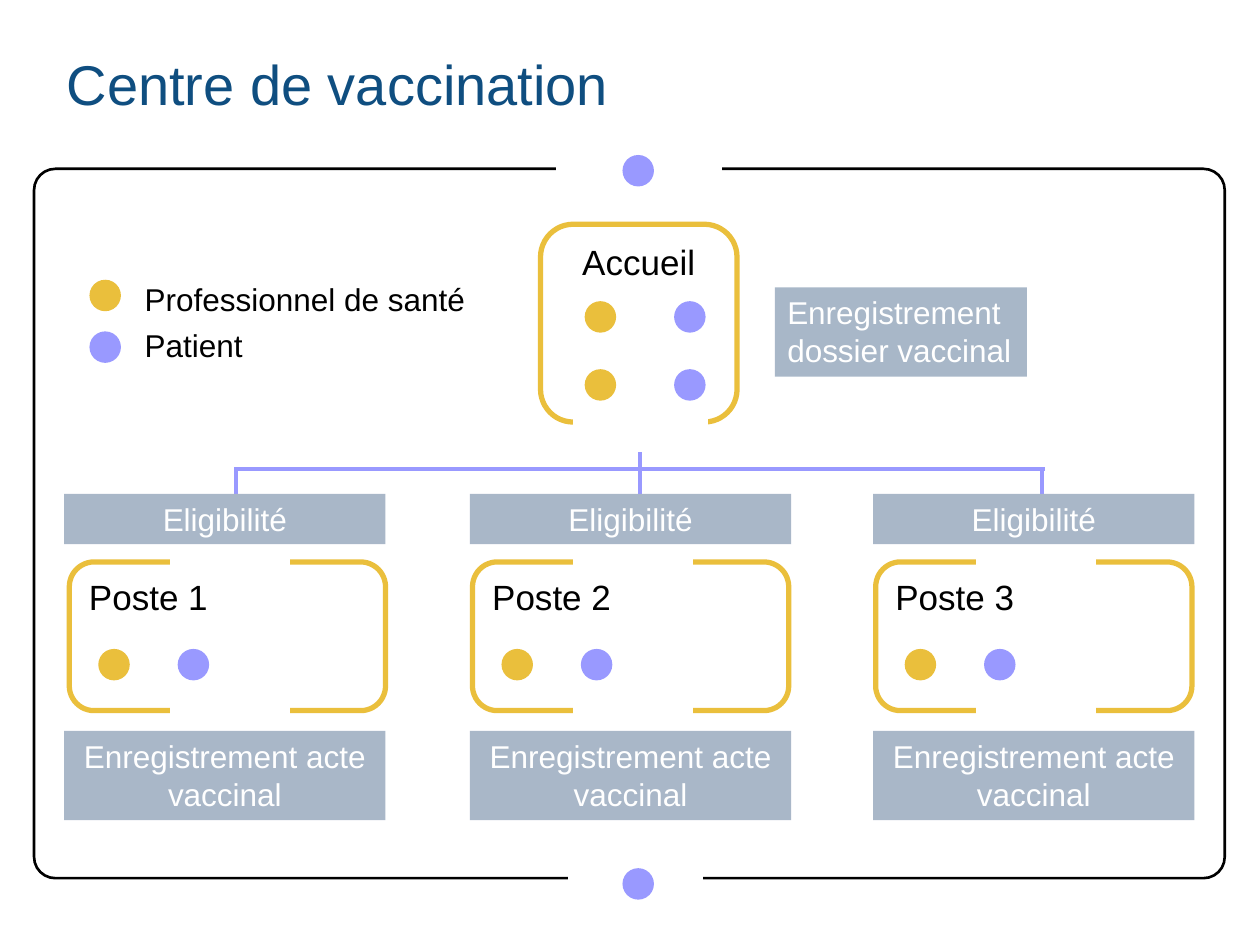
from pptx import Presentation
from pptx.dml.color import RGBColor
from pptx.enum.shapes import MSO_CONNECTOR as CONN, MSO_SHAPE as SHAPE
from pptx.enum.text import MSO_ANCHOR as ANCHOR, PP_ALIGN as ALIGN
from pptx.oxml.ns import qn
from pptx.util import Inches, Pt
from lxml.etree import SubElement

prs = Presentation()
prs.slide_width, prs.slide_height = Inches(10), Inches(7.5)
s = prs.slides.add_slide(prs.slide_layouts[6])

# Grid of 100 columns by 75 rows
CELL = prs.slide_width / 100
GOLD, LILAC, GREY, WHITE, BLACK = "EABF3C", "9999FF", "A9B7C8", "FFFFFF", "000000"
DOT = 2.5


def rgb(color):
    return RGBColor.from_string(color)


def add(kind, x, y, w, h, fill=None, line=None, width=3, text=None, size=18,
        color=WHITE, align=ALIGN.CENTER, anchor=ANCHOR.TOP, wrap=True):
    """Place a shape, or a text box if kind is None, in grid cells."""
    box = [round(v * CELL) for v in (x, y, w, h)]
    if kind is None:
        sp = s.shapes.add_textbox(*box)
    else:
        sp = s.shapes.add_shape(kind, *box)
        sp.shadow.inherit = False
    if fill:
        sp.fill.solid()
        sp.fill.fore_color.rgb = rgb(fill)
    else:
        sp.fill.background()
    if line:
        sp.line.color.rgb = rgb(line)
        sp.line.width = Pt(width)
    else:
        sp.line.fill.background()
    if text:
        tf = sp.text_frame
        tf.word_wrap, tf.vertical_anchor = wrap, anchor
        tf.text = text
        for p in tf.paragraphs:
            p.alignment = align
            p.font.name, p.font.size = "Arial", Pt(size)
            p.font.color.rgb = rgb(color)
    return sp


# Title
add(None, 4.3, 1.3, 94.5, 10.6, text="Centre de vaccination", size=32,
    color="0F4E80", align=ALIGN.LEFT, anchor=ANCHOR.MIDDLE)

# Legend
for label, color, dot_y, text_y, w in (
        ("Professionnel de santé", GOLD, 22.2, 21.7, 27.7),
        ("Patient", LILAC, 26.3, 25.4, 9.9)):
    add(SHAPE.OVAL, 7.1, dot_y, DOT, DOT, color)
    add(None, 10.5, text_y, w, 4, text=label, color=BLACK,
        align=ALIGN.LEFT, wrap=False)

# Reception room with its exit
add(SHAPE.ROUNDED_RECTANGLE, 42.9, 17.8, 15.6, 15.7, line=GOLD,
    text="Accueil", size=20, color=BLACK)
for y in (23.9, 29.3):
    add(SHAPE.OVAL, 46.4, y, DOT, DOT, GOLD)
    add(SHAPE.OVAL, 53.5, y, DOT, DOT, LILAC)
add(SHAPE.RECTANGLE, 45.7, 32.9, 10.3, 2.1, WHITE, WHITE)
add(SHAPE.RECTANGLE, 61.5, 22.8, 20, 7.1, "A8B7C8",
    text="Enregistrement\ndossier vaccinal", align=ALIGN.LEFT, wrap=False)

# Patient flow: one bar and three arrows
for x1, y1, x2, y2 in ((82.9, 37.2, 18.6, 37.2), (18.7, 37.2, 18.7, 41.1),
                       (50.8, 35.9, 50.8, 41.1), (82.7, 37.2, 82.7, 41.1)):
    c = s.shapes.add_connector(
        CONN.STRAIGHT, *(round(v * CELL) for v in (x1, y1, x2, y2)))
    c.line.color.rgb, c.line.width = rgb(LILAC), Pt(2.25)
    if x1 == x2:
        SubElement(c.line._get_or_add_ln(), qn("a:tailEnd"), type="triangle")
    SubElement(c._element.spPr, qn("a:effectLst"))

# Three stations, each with its steps before and after
for i, step_x in enumerate((5.1, 37.3, 69.3)):
    x = 5.5 + 32 * i
    add(SHAPE.ROUNDED_RECTANGLE, x, 44.6, 25.1, 11.8, line=GOLD,
        text=f"Poste {i + 1}", size=20, color=BLACK, align=ALIGN.LEFT)
    add(SHAPE.OVAL, x + 2.3, 51.5, DOT, DOT, GOLD)
    add(SHAPE.OVAL, x + 8.6, 51.5, DOT, DOT, LILAC)
    for y in (43.8, 55.1):
        add(SHAPE.RECTANGLE, x + 8.2, y, 9.1, 2.1, WHITE, WHITE)
    add(SHAPE.RECTANGLE, step_x, 39.2, 25.5, 4, GREY, text="Eligibilité")
    add(SHAPE.RECTANGLE, step_x, 58, 25.5, 7.1, GREY,
        text="Enregistrement acte vaccinal")

# Outer wall with its entrance and exit
wall = add(SHAPE.ROUNDED_RECTANGLE, 2.7, 13.4, 94.5, 56.3, line=BLACK, width=1.5)
wall.adjustments[0] = 0.03
for x, y, w, h, dot_y in ((44.3, 12.3, 12.8, 1.9, 12.3),
                          (45.3, 68.5, 10.3, 2.1, 68.9)):
    add(SHAPE.RECTANGLE, x, y, w, h, WHITE, WHITE)
    add(SHAPE.OVAL, 49.4, dot_y, DOT, DOT, LILAC)

prs.save("out.pptx")
